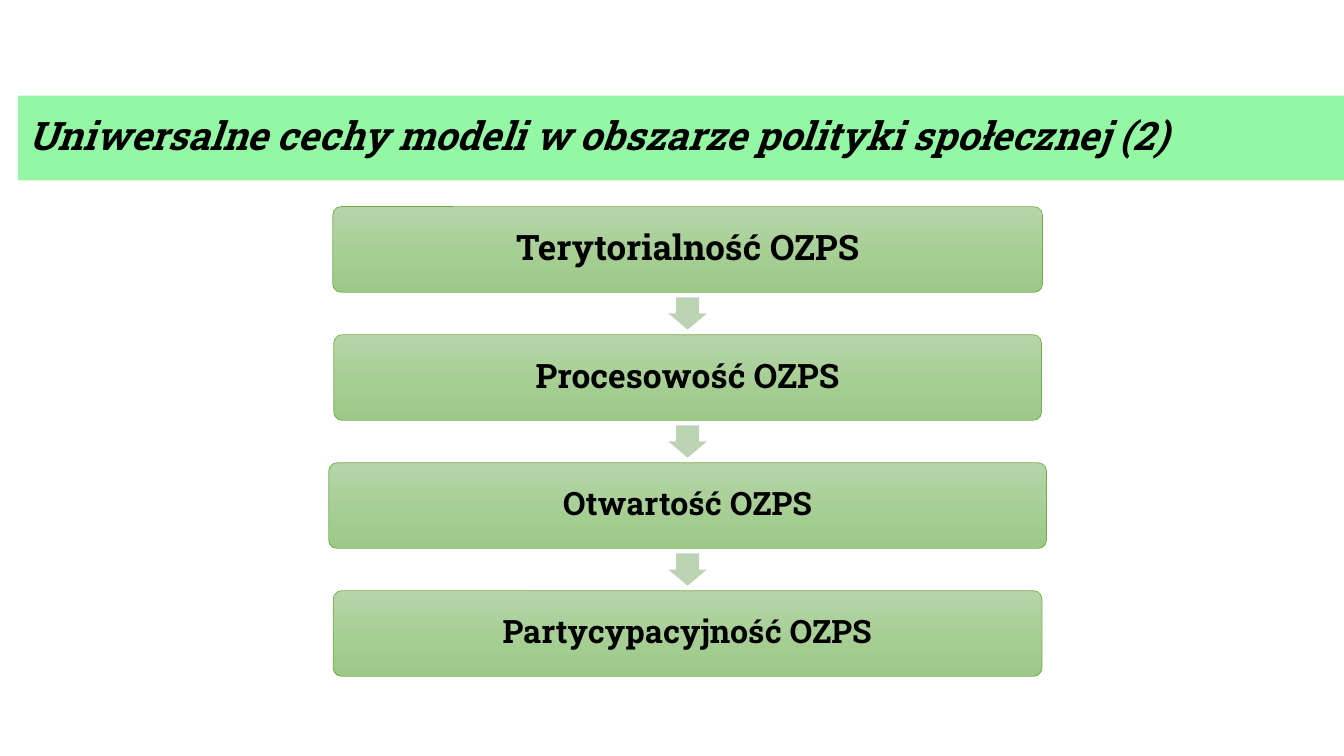
from dataclasses import dataclass

from pptx import Presentation
from pptx.dml.color import RGBColor
from pptx.enum.shapes import MSO_SHAPE
from pptx.enum.text import MSO_ANCHOR, PP_ALIGN
from pptx.util import Inches, Pt


@dataclass(frozen=True)
class Theme:
    font: str = "Roboto Slab"
    ink: str = "000000"
    banner: str = "93F7A4"
    step_top: str = "B5D5A7"
    step_bottom: str = "9CC987"
    step_edge: str = "70AD47"
    arrow: str = "BBD3B1"
    title_size: int = 28
    step_sizes: tuple = (25, 24, 23, 23)


THEME = Theme()
TITLE = "Uniwersalne cechy modeli w obszarze polityki społecznej (2)"
FEATURES = (
    ("Terytorialność OZPS", 7.04),
    ("Procesowość OZPS", 7.02),
    ("Otwartość OZPS", 7.12),
    ("Partycypacyjność OZPS", 7.03),
)


def rgb(code):
    return RGBColor.from_string(code)


def add_block(slide, kind, left, top, width, height):
    block = slide.shapes.add_shape(
        kind, Inches(left), Inches(top), Inches(width), Inches(height))
    block.shadow.inherit = False
    block.line.fill.background()
    return block


def write(block, wording, size, align, italic=False):
    frame = block.text_frame
    frame.word_wrap = True
    frame.vertical_anchor = MSO_ANCHOR.MIDDLE
    paragraph = frame.paragraphs[0]
    paragraph.text = wording
    paragraph.alignment = align
    paragraph.line_spacing = 0.9
    font = paragraph.font
    font.name = THEME.font
    font.size = Pt(size)
    font.bold = True
    font.italic = italic
    font.color.rgb = rgb(THEME.ink)


def add_banner(slide, left, top, width, height):
    banner = add_block(slide, MSO_SHAPE.RECTANGLE, left, top, width, height)
    banner.fill.solid()
    banner.fill.fore_color.rgb = rgb(THEME.banner)
    write(banner, TITLE, THEME.title_size, PP_ALIGN.LEFT, italic=True)


def add_step(slide, wording, size, left, top, width, height):
    step = add_block(slide, MSO_SHAPE.ROUNDED_RECTANGLE, left, top, width, height)
    step.adjustments[0] = 0.1
    step.fill.gradient()
    step.fill.gradient_angle = 270
    for stop, color in zip(step.fill.gradient_stops,
                           (THEME.step_top, THEME.step_bottom)):
        stop.color.rgb = rgb(color)
    step.line.color.rgb = rgb(THEME.step_edge)
    step.line.width = Pt(0.5)
    write(step, wording, size, PP_ALIGN.CENTER)


def add_arrow(slide, left, top, width, height):
    arrow = add_block(slide, MSO_SHAPE.DOWN_ARROW, left, top, width, height)
    arrow.adjustments[0] = 0.6
    arrow.adjustments[1] = 0.5
    arrow.fill.solid()
    arrow.fill.fore_color.rgb = rgb(THEME.arrow)


def add_process(slide, left, top, width, height):
    center = left + width / 2
    step_height, arrow_width, arrow_height = 0.85, 0.38, 0.32
    pitch = (height - step_height) / (len(FEATURES) - 1)
    gap = pitch - step_height
    for index, ((wording, step_width), size) in enumerate(
            zip(FEATURES, THEME.step_sizes)):
        step_top = top + index * pitch
        if index:
            add_arrow(slide, center - arrow_width / 2,
                      step_top - (gap + arrow_height) / 2,
                      arrow_width, arrow_height)
        add_step(slide, wording, size, center - step_width / 2, step_top,
                 step_width, step_height)


def main():
    deck = Presentation()
    deck.slide_width = Inches(13.33)
    deck.slide_height = Inches(7.5)
    slide = deck.slides.add_slide(deck.slide_layouts[6])
    add_banner(slide, 0.18, 0.95, 13.15, 0.84)
    add_process(slide, 3.26, 2.05, 7.12, 4.66)
    deck.save("out.pptx")


if __name__ == "__main__":
    main()
